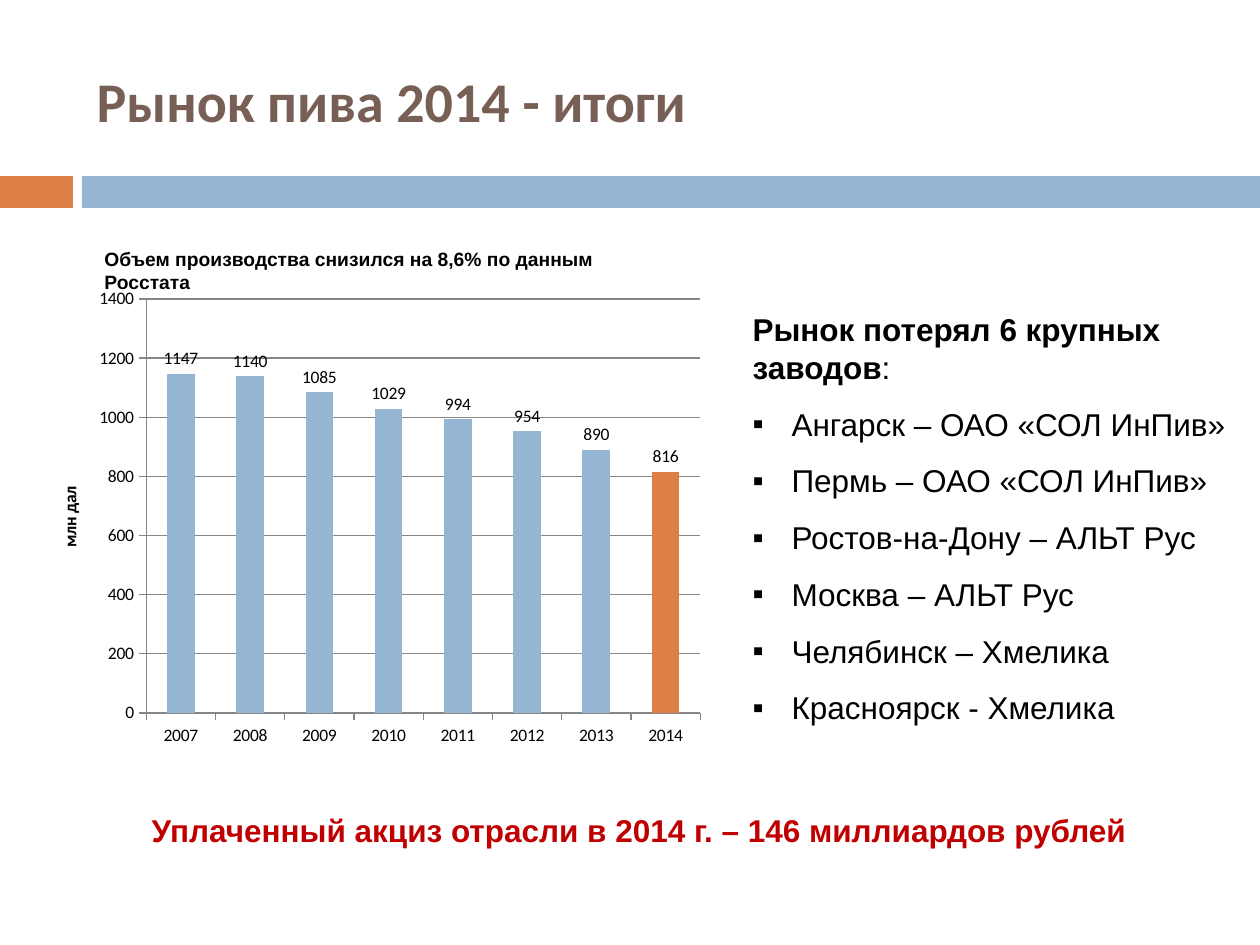
import pptx
import pptx.chart.data
import pptx.dml.color
import pptx.enum.chart
import pptx.enum.shapes
import pptx.enum.text
import pptx.oxml
import pptx.oxml.ns
import pptx.util
from lxml import etree

SCALE = 914400 // 126
BLUE, ORANGE, BLACK, GREY = "94B6D2", "DD8047", "000000", "868686"
YEARS = [str(year) for year in range(2007, 2015)]
VOLUMES = [1147, 1140, 1085, 1029, 994, 954, 890, 816]
HEAD = "Рынок потерял 6 крупных заводов"
PLANTS = [
    "Ангарск – ОАО «СОЛ ИнПив»",
    "Пермь – ОАО «СОЛ ИнПив»",
    "Ростов-на-Дону – АЛЬТ Рус",
    "Москва – АЛЬТ Рус",
    "Челябинск – Хмелика",
    "Красноярск - Хмелика",
]


def px(num):
    return pptx.util.Emu(round(num * SCALE))


def color(code):
    return pptx.dml.color.RGBColor.from_string(code)


def paint(fill, code):
    fill.solid()
    fill.fore_color.rgb = color(code)


def style(font, size, code=BLACK, bold=False, name="Arial"):
    font.name, font.size, font.bold = name, pptx.util.Pt(size), bold
    font.color.rgb = color(code)


def place(shape, left, top, width, height):
    shape.left, shape.top = px(left), px(top)
    shape.width, shape.height = px(width), px(height)


def add_bar(slide, left, width, code):
    bar = slide.shapes.add_shape(pptx.enum.shapes.MSO_SHAPE.RECTANGLE,
                                 px(left), px(176), px(width), px(32))
    bar.shadow.inherit = False
    paint(bar.fill, code)
    bar.line.fill.background()


def add_title(slide):
    title = slide.shapes.title
    place(title, 84, 32, 1124, 136)
    frame = title.text_frame
    frame.text = "Рынок пива 2014 - итоги"
    frame.vertical_anchor = pptx.enum.text.MSO_ANCHOR.MIDDLE
    para = frame.paragraphs[0]
    para.alignment = pptx.enum.text.PP_ALIGN.LEFT
    style(para.runs[0].font, 32, "775F55", True, "Calibri")


def add_note(slide, text, box, size, code, align):
    shape = slide.shapes.add_textbox(*map(px, box))
    frame = shape.text_frame
    frame.word_wrap = True
    frame.text = text
    para = frame.paragraphs[0]
    para.alignment = align
    style(para.runs[0].font, size, code, True)


def set_mark(para, indent, mark=None):
    """Set the hanging indent and bullet; no mark means no bullet."""
    props = para._p.get_or_add_pPr()
    props.set("marL", str(px(indent)))
    props.set("indent", str(-px(indent)))
    tag = pptx.oxml.ns.qn("a:buChar" if mark else "a:buNone")
    bullet = etree.SubElement(props, tag)
    if mark:
        bullet.set("char", mark)


def add_list(slide):
    body = slide.placeholders[1]
    place(body, 740, 304, 520, 432)
    frame = body.text_frame
    frame.auto_size = pptx.enum.text.MSO_AUTO_SIZE.NONE
    frame.text = "\n".join([HEAD] + PLANTS)
    head, *items = frame.paragraphs
    head.add_run().text = ":"
    for para in frame.paragraphs:
        para.space_before = pptx.util.Pt(0)
        for run in para.runs:
            style(run.font, 18)
    head.runs[0].font.bold = True
    set_mark(head, 0)
    for para in items:
        para.line_spacing = 1.5
        set_mark(para, 39, "▪")


def set_plot(chart, left, top, width, height):
    """Fix the inner plot area, as shares of the chart."""
    layout = pptx.oxml.parse_xml(
        f'<c:layout {pptx.oxml.ns.nsdecls("c")}><c:manualLayout>'
        '<c:layoutTarget val="inner"/><c:xMode val="edge"/><c:yMode val="edge"/>'
        f'<c:x val="{left}"/><c:y val="{top}"/>'
        f'<c:w val="{width}"/><c:h val="{height}"/>'
        '</c:manualLayout></c:layout>')
    area = chart._chartSpace.chart.plotArea
    for old in area.findall(pptx.oxml.ns.qn("c:layout")):
        area.remove(old)
    area.insert(0, layout)


def add_chart(slide):
    kinds = pptx.enum.chart
    data = pptx.chart.data.CategoryChartData()
    data.categories = YEARS
    data.add_series("Объем производства", VOLUMES)
    frame = slide.shapes.add_chart(kinds.XL_CHART_TYPE.COLUMN_CLUSTERED,
                                   px(30), px(280), px(684), px(476), data)
    chart = frame.chart
    chart.has_title = chart.has_legend = False
    style(chart.font, 10, name="Calibri")
    set_plot(chart, 0.17, 0.04, 0.81, 0.87)

    plot = chart.plots[0]
    plot.vary_by_categories = False
    plot.gap_width = 150
    plot.has_data_labels = True
    plot.data_labels.show_value = True
    plot.data_labels.position = kinds.XL_LABEL_POSITION.OUTSIDE_END
    bars = plot.series[0]
    paint(bars.format.fill, BLUE)
    paint(bars.points[len(VOLUMES) - 1].format.fill, ORANGE)

    scale = chart.value_axis
    scale.minimum_scale, scale.maximum_scale, scale.major_unit = 0, 1400, 200
    scale.has_major_gridlines = True
    title = scale.axis_title.text_frame
    title.text = "млн дал"
    style(title.paragraphs[0].runs[0].font, 10, bold=True, name="Calibri")
    for axis in (chart.category_axis, scale):
        axis.major_tick_mark = kinds.XL_TICK_MARK.OUTSIDE
    for part in (chart.category_axis, scale, scale.major_gridlines):
        part.format.line.color.rgb = color(GREY)
        part.format.line.width = pptx.util.Pt(0.75)


def main():
    deck = pptx.Presentation()
    deck.slide_width, deck.slide_height = px(1260), px(945)
    slide = deck.slides.add_slide(deck.slide_layouts[1])
    align = pptx.enum.text.PP_ALIGN
    add_bar(slide, 0, 73, ORANGE)
    add_bar(slide, 82, 1178, BLUE)
    add_title(slide)
    add_chart(slide)
    add_note(slide, "Объем производства снизился на 8,6% по данным Росстата",
             (92, 241, 605, 36), 11, BLACK, align.LEFT)
    add_list(slide)
    add_note(slide, "Уплаченный акциз отрасли в 2014 г. – 146 миллиардов рублей",
             (92, 805, 1094, 51), 18, "C00000", align.CENTER)
    deck.save("out.pptx")


if __name__ == "__main__":
    main()
